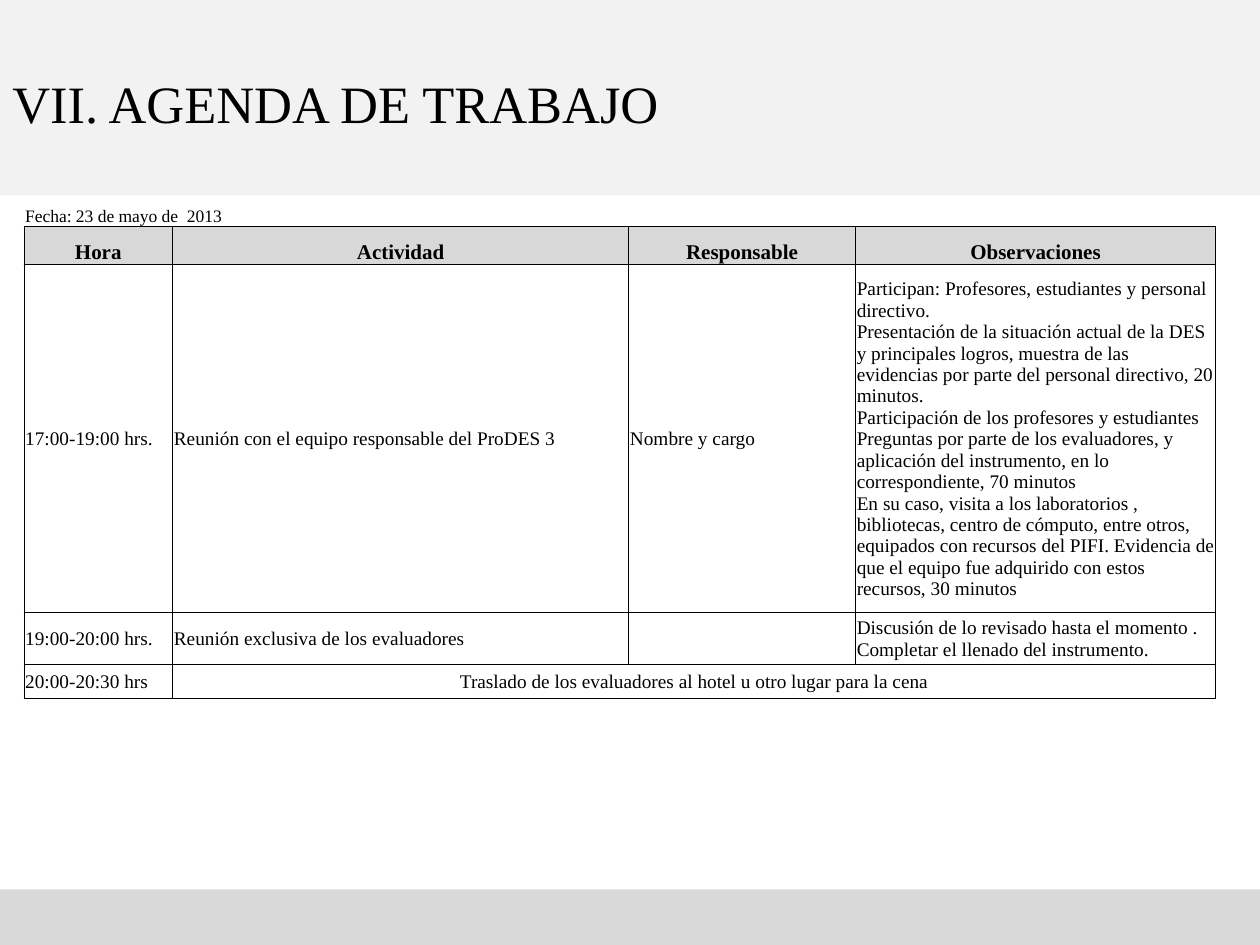
from dataclasses import dataclass
from lxml import etree
from pptx import Presentation
from pptx import util as u
from pptx.dml.color import RGBColor
from pptx.enum import shapes, text
from pptx.oxml import ns

WIDE, HIGH = 10, 7.5
LEFT = 0.19
COLS = [1.18, 3.62, 1.8, 2.86]
MID, LOW = text.MSO_ANCHOR.MIDDLE, text.MSO_ANCHOR.BOTTOM
CENTER = text.PP_ALIGN.CENTER


@dataclass
class Theme:
    font: str = "Times New Roman"
    ink: str = "000000"
    top: str = "F2F2F2"
    foot: str = "D9D9D9"
    head: str = "D8D8D8"
    rule: float = 0.5
    title: int = 30
    date: int = 10
    label: int = 12
    body: int = 11


T = Theme()

DATE = "Fecha: 23 de mayo de  2013"
HEADS = ["Hora", "Actividad", "Responsable", "Observaciones"]
NOTES = [
    "Participan: Profesores, estudiantes y personal directivo.\v"
    "Presentación de la situación actual de la DES y principales logros, "
    "muestra de las evidencias por parte del personal directivo, 20 minutos.",
    "Participación de los profesores y estudiantes Preguntas por parte de los "
    "evaluadores, y aplicación del instrumento, en lo correspondiente, 70 minutos",
    "En su caso, visita a los laboratorios , bibliotecas, centro de cómputo, "
    "entre otros, equipados con recursos del PIFI. Evidencia de que el equipo "
    "fue adquirido con estos recursos, 30 minutos",
]
AGENDA = [
    ["17:00-19:00 hrs.", "Reunión con el equipo responsable del ProDES 3",
     "Nombre y cargo", "\n".join(NOTES)],
    ["19:00-20:00 hrs.", "Reunión exclusiva de los evaluadores", "",
     "Discusión de lo revisado hasta el momento . Completar el llenado del instrumento."],
    ["20:00-20:30 hrs",
     "Traslado de los evaluadores al hotel u otro lugar para la cena", "", ""],
]


def style(frame, size, bold=False, align=None):
    for para in frame.paragraphs:
        para.alignment = align
        font = para.font
        font.name, font.size, font.bold = T.font, u.Pt(size), bold
        font.color.rgb = RGBColor.from_string(T.ink)
        for gap in para._p.findall(ns.qn("a:br")):
            etree.SubElement(gap, ns.qn("a:rPr"), sz=str(size * 100))
        if not para.runs:
            etree.SubElement(para._p, ns.qn("a:endParaRPr"), sz=str(size * 100))


def band(slide, top, high, color):
    box = slide.shapes.add_shape(
        shapes.MSO_SHAPE.RECTANGLE, 0, u.Inches(top), u.Inches(WIDE), u.Inches(high))
    box.shadow.inherit = False
    box.fill.solid()
    box.fill.fore_color.rgb = RGBColor.from_string(color)
    box.line.fill.background()


def title(slide, words):
    box = slide.shapes.add_textbox(0, u.Inches(0.07), u.Inches(WIDE), u.Inches(1.49))
    frame = box.text_frame
    frame.word_wrap = True
    frame.vertical_anchor = MID
    frame.text = words
    style(frame, T.title)


def border(cell, sides):
    props = cell._tc.get_or_add_tcPr()
    for side in "LRTB":
        line = etree.SubElement(props, ns.qn("a:ln" + side), w=str(u.Pt(T.rule)))
        if side in sides:
            fill = etree.SubElement(line, ns.qn("a:solidFill"))
            etree.SubElement(fill, ns.qn("a:srgbClr"), val=T.ink)
        else:
            etree.SubElement(line, ns.qn("a:noFill"))


def fill(cell, words, size, anchor=MID, align=None, bold=False, color=None, sides="LRTB"):
    cell.margin_left = cell.margin_right = cell.margin_top = u.Inches(0.01)
    cell.margin_bottom = 0
    cell.vertical_anchor = anchor
    cell.text_frame.text = words
    style(cell.text_frame, size, bold, align)
    border(cell, sides)
    if color:
        cell.fill.solid()
        cell.fill.fore_color.rgb = RGBColor.from_string(color)
    else:
        cell.fill.background()


def grid(slide, top, high, rows):
    shape = slide.shapes.add_table(
        len(rows), len(COLS), u.Inches(LEFT), u.Inches(top),
        u.Inches(sum(COLS)), u.Inches(high))
    table = shape.table
    table.first_row = table.horz_banding = False
    for col, wide in zip(table.columns, COLS):
        col.width = u.Inches(wide)
    for row, tall in zip(table.rows, rows):
        row.height = u.Inches(tall)
    shape.height = u.Inches(high)
    return table


def header(slide):
    table = grid(slide, 1.62, 0.48, [0.16, 0.3])
    table.cell(0, 0).merge(table.cell(0, 1))
    for col, words in enumerate(HEADS):
        fill(table.cell(0, col), "" if col else DATE, T.date, LOW, sides="B")
        fill(table.cell(1, col), words, T.label, LOW, CENTER, True, T.head)


def agenda(slide):
    table = grid(slide, 2.1, 3.25, [1.22, 0.41, 0.27])
    last = len(AGENDA) - 1
    table.cell(last, 1).merge(table.cell(last, 3))
    for row, line in enumerate(AGENDA):
        for col, words in enumerate(line):
            align = CENTER if row == last and col else None
            fill(table.cell(row, col), words, T.body, align=align)


def main():
    deck = Presentation()
    deck.slide_width, deck.slide_height = u.Inches(WIDE), u.Inches(HIGH)
    slide = deck.slides.add_slide(deck.slide_layouts[6])
    band(slide, 0, 1.55, T.top)
    band(slide, HIGH - 0.44, 0.44, T.foot)
    title(slide, "VII. AGENDA DE TRABAJO")
    header(slide)
    agenda(slide)
    deck.save("out.pptx")


if __name__ == "__main__":
    main()
